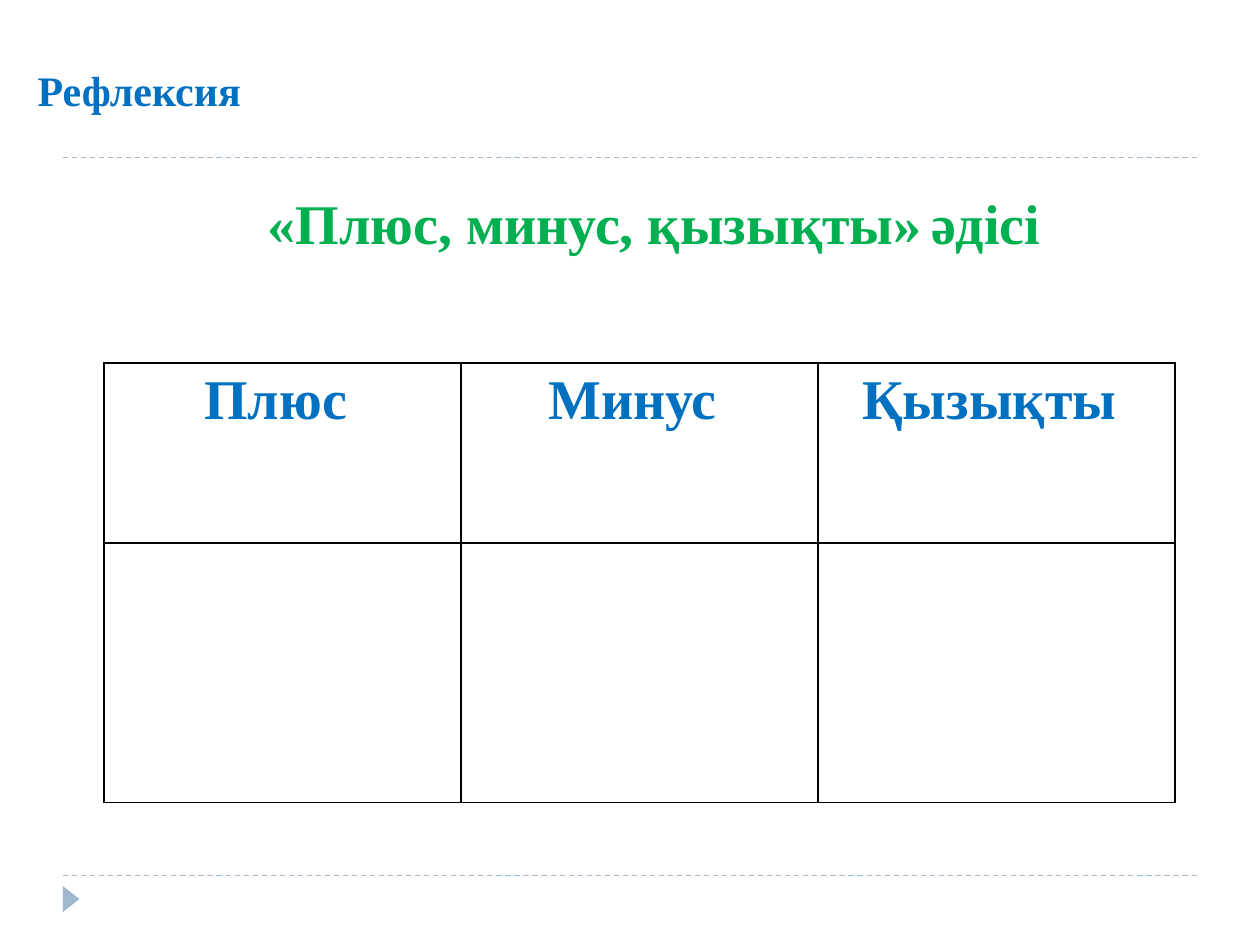
"""Builds the reflection slide with a plus, minus, interesting table."""
from pptx import Presentation
from pptx.dml.color import RGBColor
from pptx.enum.dml import MSO_LINE
from pptx.enum.shapes import MSO_CONNECTOR, MSO_SHAPE
from pptx.enum.text import MSO_ANCHOR, MSO_AUTO_SIZE, PP_ALIGN
from pptx.oxml import parse_xml
from pptx.oxml.ns import nsdecls
from pptx.util import Pt

STRAIGHT = MSO_CONNECTOR.STRAIGHT
TRIANGLE = MSO_SHAPE.ISOSCELES_TRIANGLE
DASH = MSO_LINE.DASH
CENTER = PP_ALIGN.CENTER
MIDDLE = MSO_ANCHOR.MIDDLE
GROW = MSO_AUTO_SIZE.SHAPE_TO_FIT_TEXT

FONT = "Times New Roman"
COLORS = {"accent": "9FB8CD", "green": "00B050", "blue": "0070C0", "border": "000000"}


def add_run(paragraph, text, size, color):
    run = paragraph.add_run()
    run.text = text
    run.font.name = FONT
    run.font.size = Pt(size)
    run.font.bold = True
    run.font.color.rgb = RGBColor.from_string(COLORS[color])


def add_borders(cell):
    properties = cell._tc.get_or_add_tcPr()
    for position, side in enumerate(("lnL", "lnR", "lnT", "lnB")):
        border = parse_xml(
            f'<a:{side} {nsdecls("a")} w="{Pt(1)}"><a:solidFill>'
            f'<a:srgbClr val="{COLORS["border"]}"/></a:solidFill></a:{side}>'
        )
        properties.insert(position, border)


presentation = Presentation()
presentation.slide_width = Pt(720)
presentation.slide_height = Pt(540)
slide = presentation.slides.add_slide(presentation.slide_layouts[6])
accent = RGBColor.from_string(COLORS["accent"])

for y in (500.4, 90):
    divider = slide.shapes.add_connector(STRAIGHT, Pt(36), Pt(y), Pt(684), Pt(y))
    divider.line.color.rgb = accent
    divider.line.width = Pt(0.75)
    divider.line.dash_style = DASH
    divider._element.spPr.append(parse_xml(f'<a:effectLst {nsdecls("a")}/>'))

marker = slide.shapes.add_shape(TRIANGLE, Pt(33.1), Pt(509), Pt(15), Pt(9.5))
marker.rotation = 90
marker.shadow.inherit = False
marker.fill.solid()
marker.fill.fore_color.rgb = accent
marker.line.fill.background()

method_box = slide.shapes.add_textbox(Pt(143.3), Pt(103.7), Pt(460.8), Pt(46))
method_frame = method_box.text_frame
method_frame.word_wrap = False
method_frame.auto_size = GROW
method_frame.vertical_anchor = MIDDLE
method_paragraph = method_frame.paragraphs[0]
method_paragraph.alignment = CENTER
for text, size in (("«Плюс, минус, қызықты»", 32), (" ", 20), ("әдісі", 32)):
    add_run(method_paragraph, text, size, "green")

title_box = slide.shapes.add_textbox(Pt(14.4), Pt(33.1), Pt(260.6), Pt(36))
title_box.text_frame.word_wrap = True
title_box.text_frame.auto_size = GROW
add_run(title_box.text_frame.paragraphs[0], "Рефлексия", 24, "blue")

table_frame = slide.shapes.add_table(2, 3, Pt(59.5), Pt(207.5), Pt(612), Pt(251))
table = table_frame.table
table.first_row = False
table.horz_banding = False
for column in table.columns:
    column.width = Pt(204)
for row, height in zip(table.rows, (102.8, 148.2)):
    row.height = Pt(height)
for cell in table.iter_cells():
    cell.fill.background()
    add_borders(cell)
for column_index, heading in enumerate(("Плюс ", "Минус ", "Қызықты ")):
    paragraph = table.cell(0, column_index).text_frame.paragraphs[0]
    paragraph.alignment = CENTER
    add_run(paragraph, heading, 32, "blue")

presentation.save("out.pptx")
